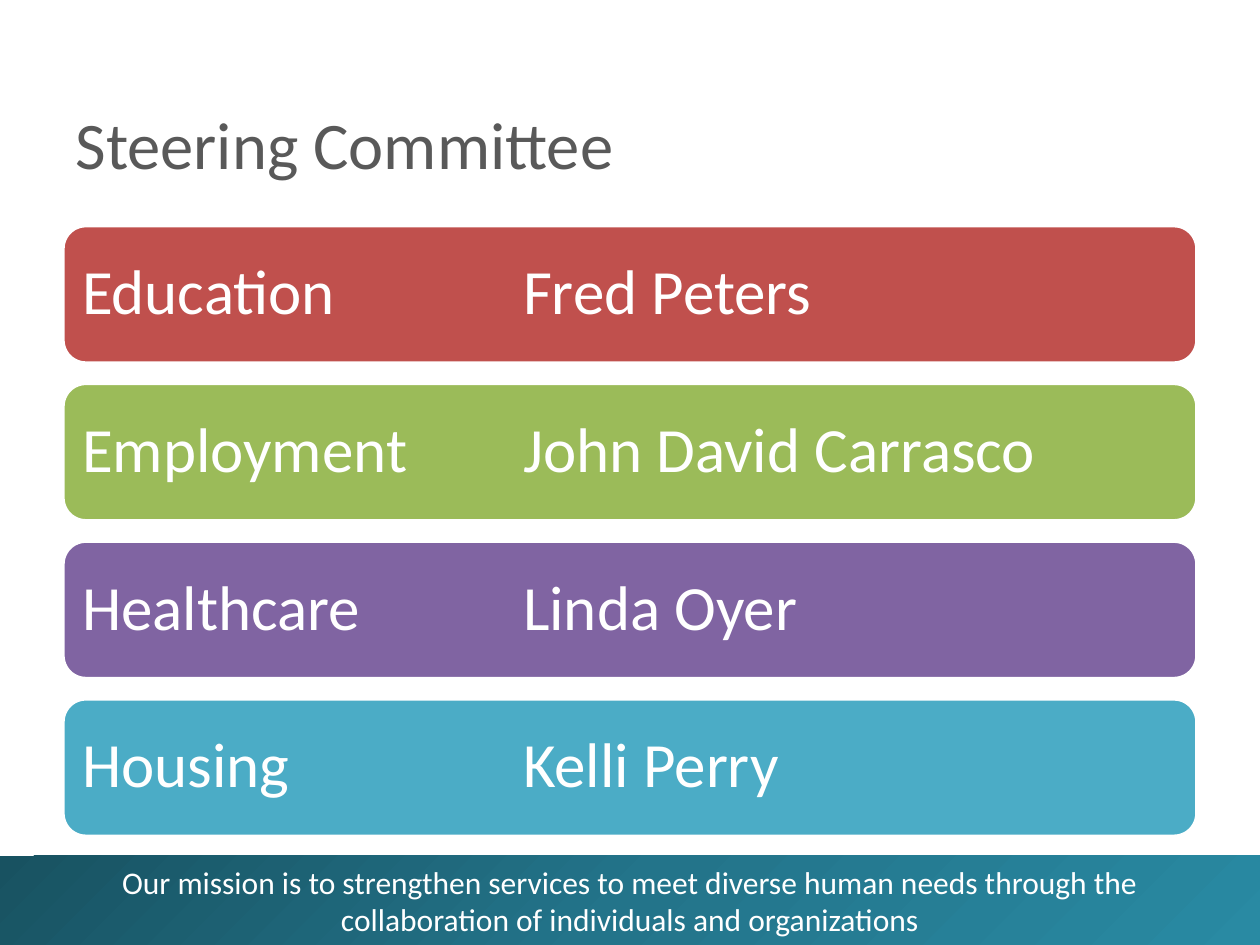
from copy import deepcopy

from pptx import Presentation
from pptx.dml.color import RGBColor
from pptx.enum import shapes, text
from pptx.oxml.ns import qn
from pptx.util import Cm, Pt

WHITE = RGBColor(0xFF, 0xFF, 0xFF)
GRAY = RGBColor(0x59, 0x59, 0x59)
RED = RGBColor(0xC0, 0x50, 0x4D)
GREEN = RGBColor(0x9B, 0xBB, 0x59)
PURPLE = RGBColor(0x80, 0x64, 0xA2)
AQUA = RGBColor(0x4B, 0xAC, 0xC6)
BANNER_COLORS = (
    RGBColor(0x18, 0x52, 0x61),
    RGBColor(0x23, 0x74, 0x8A),
    RGBColor(0x29, 0x8A, 0xA3),
)

COMMITTEE = (
    ("Education", "Fred Peters", RED),
    ("Employment", "John David Carrasco", GREEN),
    ("Healthcare", "Linda Oyer", PURPLE),
    ("Housing", "Kelli Perry", AQUA),
)
MISSION = (
    "Our mission is to strengthen services to meet diverse human needs through the",
    "collaboration of individuals and organizations",
)

MARGIN = Cm(1.27)
CARD_TOP, CARD_PITCH = Cm(4.55), Cm(3.18)
CARD_WIDTH, CARD_HEIGHT = Cm(22.86), Cm(2.77)
NAME_TAB = Cm(8.89)


def set_attributes(target, values):
    """Set each attribute named in a dict of format values."""
    for name, value in values.items():
        setattr(target, name, value)


def format_paragraph(paragraph, size, color, alignment):
    """Align a paragraph and set its font."""
    paragraph.alignment = alignment
    set_attributes(paragraph.font, {"name": "Calibri", "size": Pt(size)})
    paragraph.font.color.rgb = color


def paint(shape, color):
    """Give a shape a solid fill and a white outline."""
    shape.fill.solid()
    shape.fill.fore_color.rgb = color
    shape.line.color.rgb = WHITE
    shape.line.width = Pt(2)


def add_tab_stop(paragraph, position):
    """Add a left tab stop to a paragraph."""
    tabs = paragraph._p.get_or_add_pPr().makeelement(qn("a:tabLst"), {})
    tabs.append(tabs.makeelement(qn("a:tab"), {"pos": str(position), "algn": "l"}))
    paragraph._p.get_or_add_pPr().append(tabs)


def add_banner(slide, lines):
    """Add the gradient mission banner along the bottom edge."""
    top = Cm(17.25)
    banner = slide.shapes.add_shape(
        shapes.MSO_SHAPE.RECTANGLE, 0, top, Cm(25.4), Cm(19.05) - top
    )
    banner.shadow.inherit = False
    banner.line.fill.background()
    banner.fill.gradient()
    banner.fill.gradient_angle = 315
    stop_list = banner._element.spPr.find(".//" + qn("a:gsLst"))
    stop_list.insert(1, deepcopy(stop_list[0]))
    for index, color in enumerate(BANNER_COLORS):
        stop = banner.fill.gradient_stops[index]
        stop.color.rgb = color
        stop.position = index / 2
    frame = banner.text_frame
    set_attributes(
        frame, {"word_wrap": True, "vertical_anchor": text.MSO_ANCHOR.MIDDLE}
    )
    frame.text = "\n".join(lines)
    for paragraph in frame.paragraphs:
        format_paragraph(paragraph, 18, WHITE, text.PP_ALIGN.CENTER)


def fill_title(slide, wording):
    """Place and format the title placeholder."""
    title = slide.shapes.title
    set_attributes(
        title,
        {"left": MARGIN, "top": Cm(1.47), "width": Cm(19.48), "height": Cm(2.34)},
    )
    paint(title, WHITE)
    frame = title.text_frame
    frame.text = wording
    set_attributes(
        frame, {"word_wrap": True, "vertical_anchor": text.MSO_ANCHOR.BOTTOM}
    )
    format_paragraph(frame.paragraphs[0], 38, GRAY, text.PP_ALIGN.LEFT)


def add_card(slide, top, area, name, color):
    """Add a rounded card with a service area and its member."""
    card = slide.shapes.add_shape(
        shapes.MSO_SHAPE.ROUNDED_RECTANGLE, MARGIN, top, CARD_WIDTH, CARD_HEIGHT
    )
    card.shadow.inherit = False
    paint(card, color)
    frame = card.text_frame
    set_attributes(
        frame,
        {
            "word_wrap": True,
            "vertical_anchor": text.MSO_ANCHOR.MIDDLE,
            "margin_left": Cm(0.25),
            "margin_right": Cm(0.25),
        },
    )
    paragraph = frame.paragraphs[0]
    paragraph.text = f"{area}\t{name}"
    add_tab_stop(paragraph, NAME_TAB)
    paragraph.line_spacing = 0.9
    format_paragraph(paragraph, 36, WHITE, text.PP_ALIGN.LEFT)


def main():
    """Build the steering committee slide."""
    presentation = Presentation()
    set_attributes(
        presentation, {"slide_width": Cm(25.4), "slide_height": Cm(19.05)}
    )
    slide = presentation.slides.add_slide(presentation.slide_layouts[5])
    add_banner(slide, MISSION)
    fill_title(slide, "Steering Committee")
    for row, (area, name, color) in enumerate(COMMITTEE):
        add_card(slide, CARD_TOP + row * CARD_PITCH, area, name, color)
    presentation.save("out.pptx")


if __name__ == "__main__":
    main()
